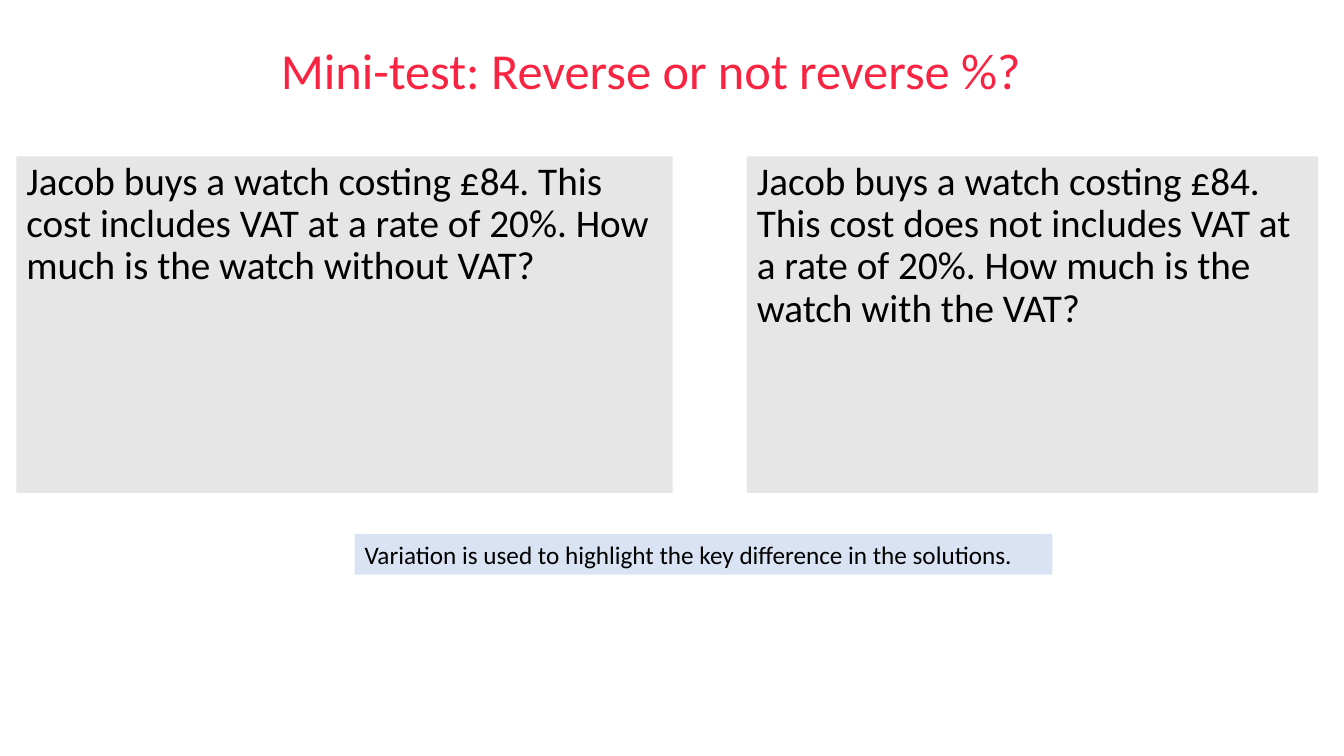
from lxml import etree
from pptx import Presentation
from pptx import util as u
from pptx.dml import color
from pptx.enum import text
from pptx.oxml import ns

TITLE = "Mini-test: Reverse or not reverse %?"
QUESTIONS = [
    ("Jacob buys a watch costing £84. This cost includes VAT at a rate of 20%. "
     "How much is the watch without VAT?", (0.41, 3.94, 16.54, 8.48)),
    ("Jacob buys a watch costing £84. This cost does not includes VAT at a rate of 20%. "
     "How much is the watch with the VAT?", (18.82, 3.94, 14.4, 8.48)),
]
NOTE = "Variation is used to highlight the key difference in the solutions."


def rgb(value):
    """Return the colour for a hex string."""
    return color.RGBColor.from_string(value)


def place(shape, box):
    """Move a shape to a box of left, top, width and height in centimetres."""
    for name, length in zip(("left", "top", "width", "height"), box):
        setattr(shape, name, u.Cm(length))


def fill(shape, value):
    """Give a shape a plain fill."""
    shape.fill.solid()
    shape.fill.fore_color.rgb = rgb(value)


def write(shape, words, size, font_color="000000", frame_format=None, paragraph_format=None):
    """Write one formatted paragraph into a shape and return it."""
    frame = shape.text_frame
    settings = {"word_wrap": True, "auto_size": text.MSO_AUTO_SIZE.NONE,
                "vertical_anchor": text.MSO_ANCHOR.TOP, **(frame_format or {})}
    for name, value in settings.items():
        setattr(frame, name, value)
    paragraph = frame.paragraphs[0]
    for name, value in (paragraph_format or {}).items():
        setattr(paragraph, name, value)
    run = paragraph.add_run()
    run.text = words
    for name, value in {"name": "Calibri", "size": u.Pt(size)}.items():
        setattr(run.font, name, value)
    run.font.color.rgb = rgb(font_color)
    return paragraph


def add_title(slide, words, box):
    """Fill the title placeholder with a centred heading."""
    shape = slide.shapes.title
    place(shape, box)
    write(shape, words, 36, "F82442",
          {"vertical_anchor": text.MSO_ANCHOR.MIDDLE},
          {"alignment": text.PP_ALIGN.CENTER, "line_spacing": 0.9})


def add_question(shape, words, box):
    """Turn a body placeholder into a grey question panel without a bullet."""
    place(shape, box)
    fill(shape, "E7E6E6")
    paragraph = write(shape, words, 28, paragraph_format={
        "alignment": text.PP_ALIGN.LEFT, "line_spacing": 0.9, "space_before": u.Pt(10)})
    properties = paragraph._p.get_or_add_pPr()
    for name in ("marL", "indent"):
        properties.set(name, "0")
    etree.SubElement(properties, ns.qn("a:buNone"))


def add_note(slide, words, box):
    """Add the blue remark below the questions."""
    shape = slide.shapes.add_textbox(*(u.Cm(length) for length in box))
    fill(shape, "DAE3F3")
    write(shape, words, 18, frame_format={"auto_size": text.MSO_AUTO_SIZE.SHAPE_TO_FIT_TEXT})


def main():
    """Build and save the mini-test slide."""
    presentation = Presentation()
    presentation.slide_width, presentation.slide_height = u.Cm(33.87), u.Cm(19.05)
    slide = presentation.slides.add_slide(presentation.slide_layouts.get_by_name("Two Content"))
    add_title(slide, TITLE, (1.8, 0, 29.21, 3.68))
    for index, (words, box) in enumerate(QUESTIONS, start=1):
        add_question(slide.placeholders[index], words, box)
    add_note(slide, NOTE, (8.94, 13.46, 17.58, 1.02))
    presentation.save("out.pptx")


if __name__ == "__main__":
    main()
